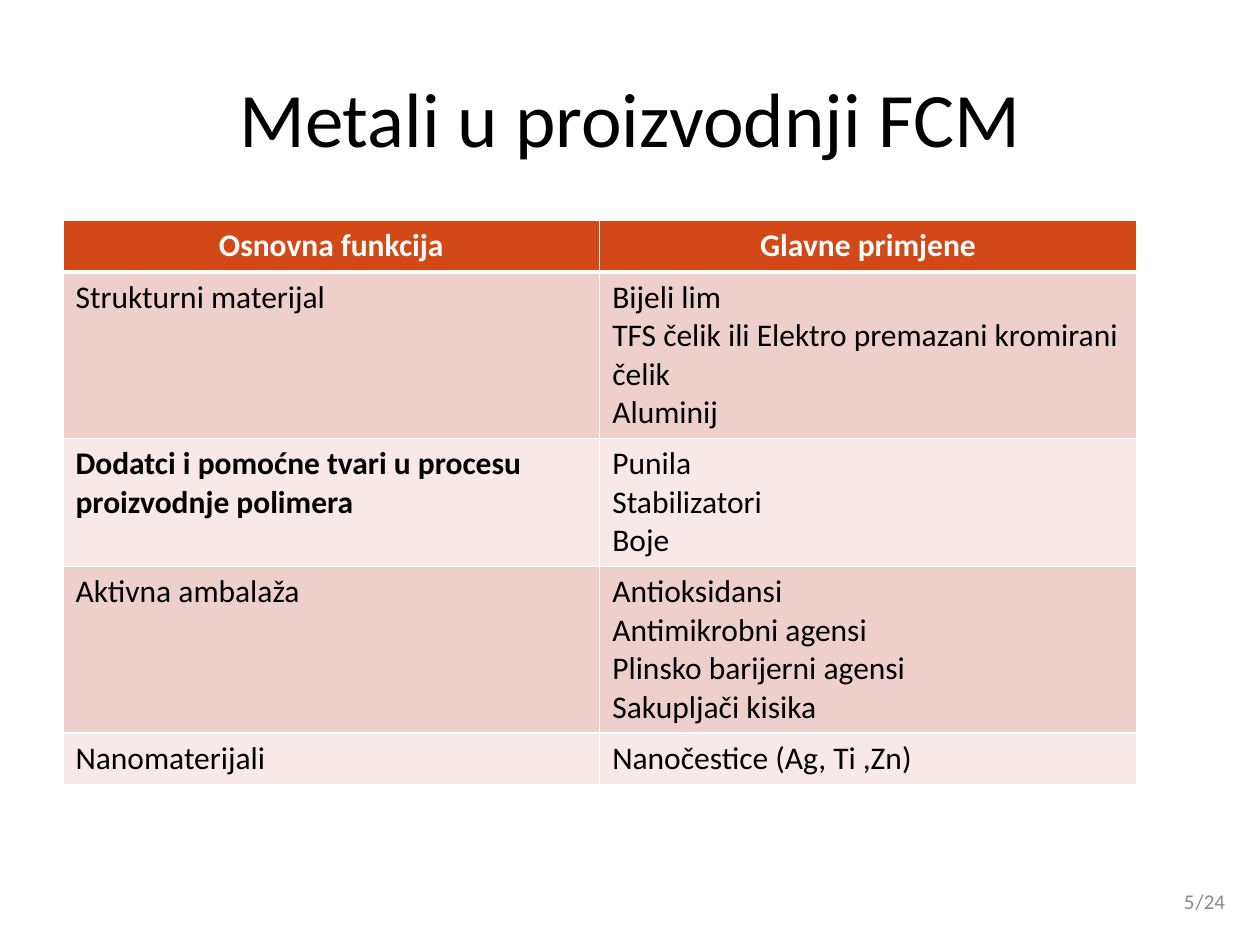
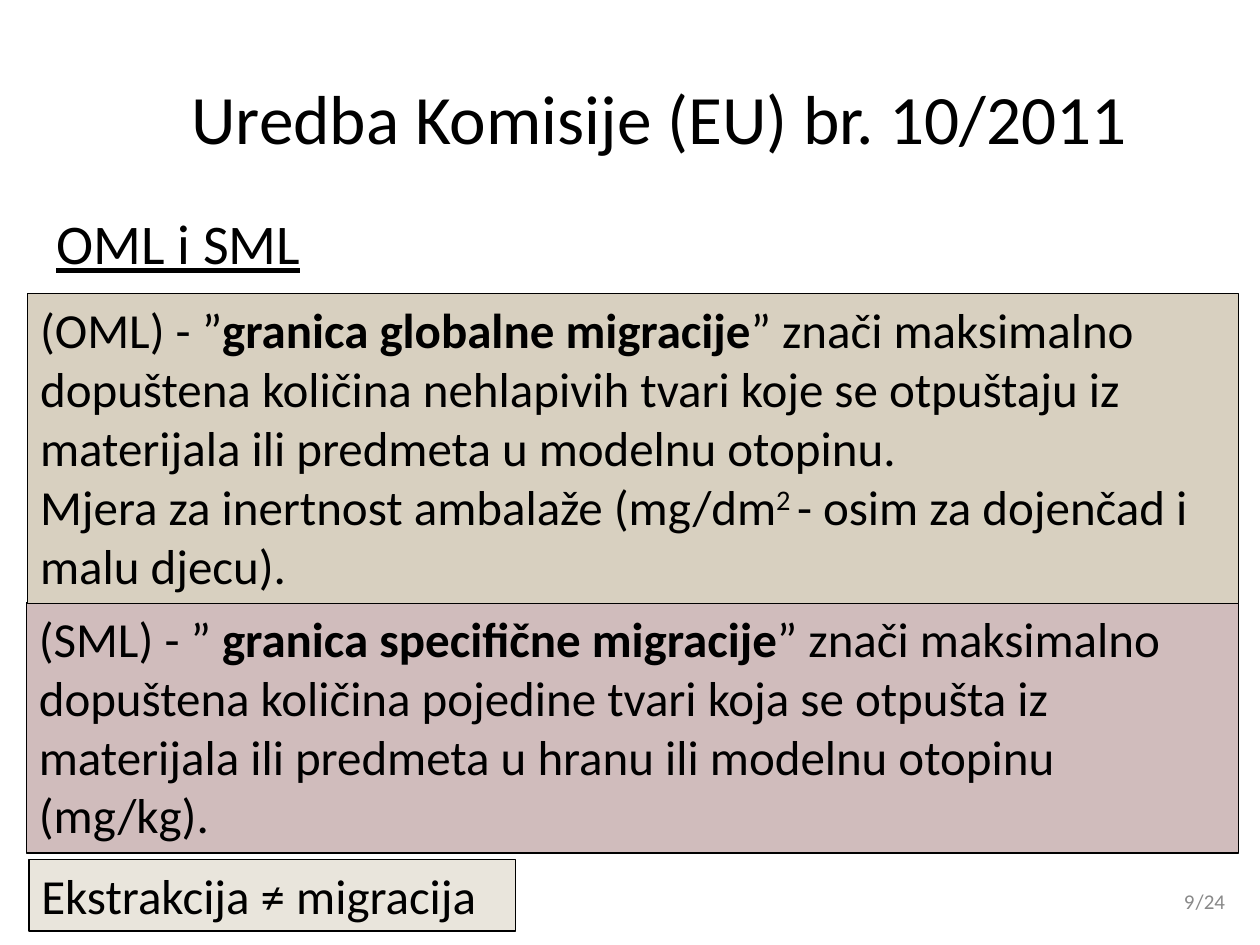
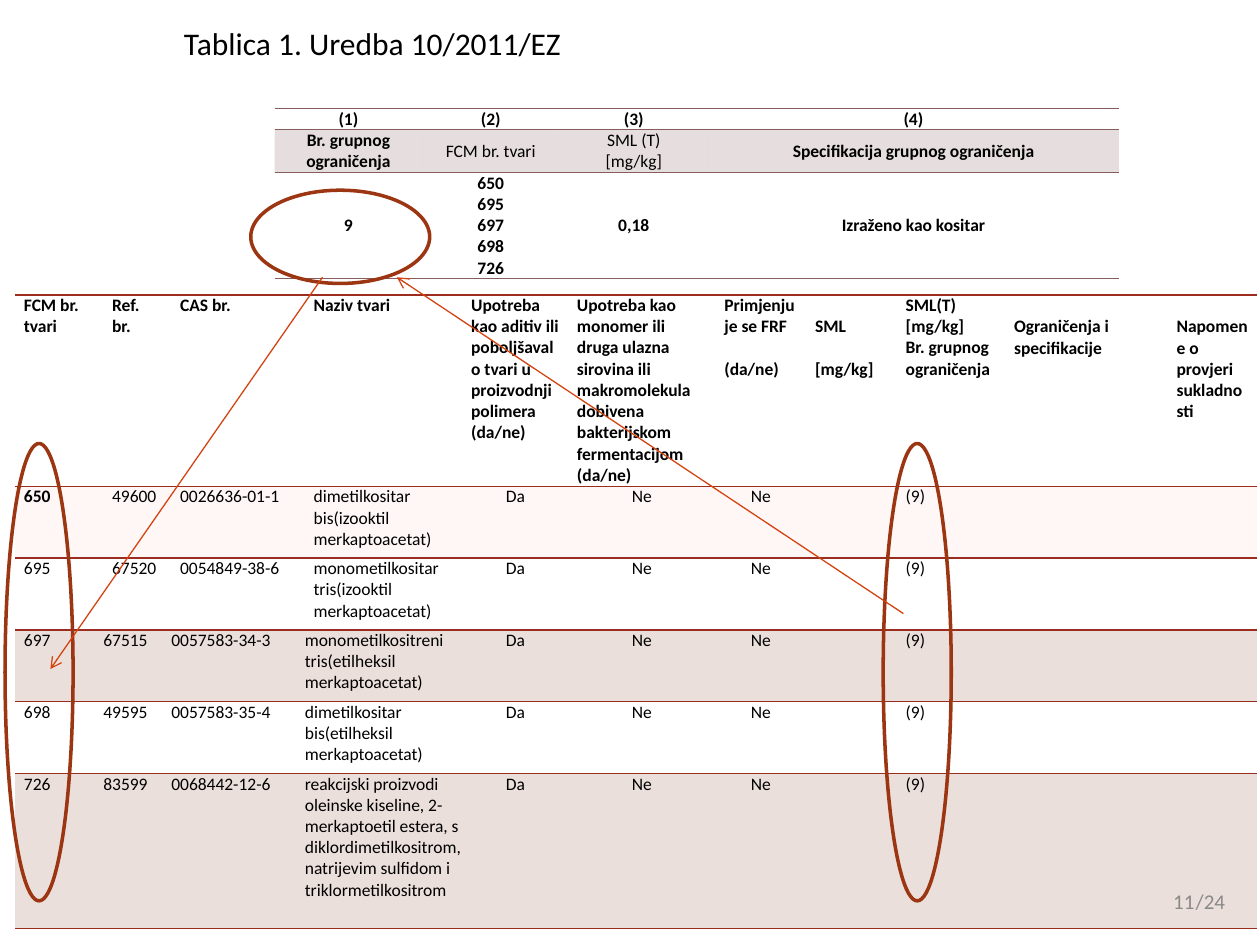
from dataclasses import dataclass
from typing import NamedTuple, Optional

from lxml.etree import SubElement
from pptx import Presentation
from pptx.dml.color import RGBColor
from pptx.enum.shapes import MSO_CONNECTOR, MSO_SHAPE
from pptx.enum.text import MSO_ANCHOR, MSO_AUTO_SIZE, PP_ALIGN
from pptx.oxml.ns import qn
from pptx.util import Inches, Pt

# Shared style
FONT = "Calibri"
BLACK = RGBColor(0x00, 0x00, 0x00)
WHITE = RGBColor(0xFF, 0xFF, 0xFF)
GREY = RGBColor(0x89, 0x89, 0x89)
ORANGE = RGBColor(0xD3, 0x48, 0x17)
ARROW_ORANGE = RGBColor(0xD3, 0x44, 0x12)
RING_BROWN = RGBColor(0x9C, 0x35, 0x11)
PINK = RGBColor(0xEF, 0xCF, 0xCC)
PALE_PINK = RGBColor(0xF7, 0xE9, 0xE7)
MAUVE = RGBColor(0xD0, 0xBC, 0xBC)
SAND = RGBColor(0xD8, 0xD0, 0xC0)
PALE_SAND = RGBColor(0xE9, 0xE5, 0xDC)
PLUM = RGBColor(0x85, 0x5D, 0x5D)
RED = RGBColor(0x9B, 0x2D, 0x1F)
PEACH = RGBColor(0xFA, 0xD9, 0xCD)
DUST = RGBColor(0xEB, 0xDF, 0xDB)

PAGE_COUNT = 24
PLAIN_TABLE_STYLE = "{2D5ABB26-0587-4C30-8999-92F81FD0307C}"
LEFT, CENTER, RIGHT = PP_ALIGN.LEFT, PP_ALIGN.CENTER, PP_ALIGN.RIGHT


class Place(NamedTuple):
    left: float
    top: float
    width: float
    height: float

    def lengths(self) -> list:
        return [Inches(value) for value in self]


class Insets(NamedTuple):
    left: float = 0.1
    top: float = 0.05
    right: float = 0.1
    bottom: float = 0.05


class Span(NamedTuple):
    text: str
    bold: bool = False
    raised: bool = False


class Border(NamedTuple):
    side: str
    color: RGBColor
    width: float


@dataclass
class Cell:
    text: str
    size: float = 10
    color: RGBColor = BLACK
    bold: bool = False
    align: PP_ALIGN = LEFT
    anchor: MSO_ANCHOR = MSO_ANCHOR.TOP
    insets: Insets = Insets()
    last_gap: float = 0
    fill: Optional[RGBColor] = None
    opacity: int = 100
    borders: tuple = ()


@dataclass
class Definition:
    place: Place
    fill: RGBColor
    paragraphs: list


def style_para(para, size: float, color: RGBColor = BLACK, align: PP_ALIGN = LEFT) -> None:
    para.alignment = align
    para.font.name = FONT
    para.font.size = Pt(size)
    para.font.color.rgb = color


def set_insets(target, insets: Insets) -> None:
    target.margin_left, target.margin_top, target.margin_right, target.margin_bottom = (
        Inches(value) for value in insets)


def add_page(deck, title: str, place: Place, size: float, align: PP_ALIGN = LEFT,
             left_inset: float = 0.1):
    page = deck.slides.add_slide(deck.slide_layouts[5])
    box = page.shapes.title
    box.left, box.top, box.width, box.height = place.lengths()
    frame = box.text_frame
    frame.text = title
    frame.auto_size = MSO_AUTO_SIZE.NONE
    frame.vertical_anchor = MSO_ANCHOR.MIDDLE
    frame.margin_left = Inches(left_inset)
    style_para(frame.paragraphs[0], size, align=align)
    return page


def add_text(page, place: Place, text: str, size: float, color: RGBColor = BLACK,
             align: PP_ALIGN = LEFT, anchor: MSO_ANCHOR = MSO_ANCHOR.TOP,
             insets: Insets = Insets()):
    frame = page.shapes.add_textbox(*place.lengths()).text_frame
    frame.word_wrap = True
    frame.vertical_anchor = anchor
    set_insets(frame, insets)
    frame.text = text
    style_para(frame.paragraphs[0], size, color, align)
    return frame


def add_footer(page, number: int) -> None:
    add_text(page, Place(7.17, 6.95, 2.33, 0.4), str(number), 12, GREY, RIGHT,
             MSO_ANCHOR.MIDDLE, Insets(right=0.02))
    add_text(page, Place(9.49, 6.95, 0.5, 0.4), f"/{PAGE_COUNT}", 12, GREY, LEFT,
             MSO_ANCHOR.MIDDLE, Insets(left=0))


def add_definition(page, definition: Definition) -> None:
    box = page.shapes.add_shape(MSO_SHAPE.RECTANGLE, *definition.place.lengths())
    box.shadow.inherit = False
    box.fill.solid()
    box.fill.fore_color.rgb = definition.fill
    box.line.color.rgb = BLACK
    box.line.width = Pt(0.75)
    frame = box.text_frame
    frame.word_wrap = True
    frame.auto_size = MSO_AUTO_SIZE.SHAPE_TO_FIT_TEXT
    frame.vertical_anchor = MSO_ANCHOR.TOP
    for index, spans in enumerate(definition.paragraphs):
        para = frame.add_paragraph() if index else frame.paragraphs[0]
        style_para(para, 28)
        for span in spans:
            run = para.add_run()
            run.text = span.text
            if span.bold:
                run.font.bold = True
            if span.raised:
                run.font._element.set("baseline", "30000")


def add_ring(page, place: Place) -> None:
    ring = page.shapes.add_shape(MSO_SHAPE.OVAL, *place.lengths())
    ring.shadow.inherit = False
    ring.fill.background()
    ring.line.color.rgb = RING_BROWN
    ring.line.width = Pt(2)


def add_arrow(page, start: tuple, end: tuple) -> None:
    points = [Inches(value) for value in start + end]
    arrow = page.shapes.add_connector(MSO_CONNECTOR.STRAIGHT, *points)
    arrow.line.color.rgb = ARROW_ORANGE
    arrow.line.width = Pt(0.75)
    SubElement(arrow.line._get_or_add_ln(), qn("a:tailEnd"), type="arrow")
    SubElement(arrow._element.spPr, qn("a:effectLst"))


def add_border(cell, border: Border) -> None:
    line = SubElement(cell._tc.get_or_add_tcPr(), qn(f"a:ln{border.side}"),
                      w=str(Pt(border.width)))
    solid = SubElement(line, qn("a:solidFill"))
    SubElement(solid, qn("a:srgbClr"), val=str(border.color))


def fill_cell(cell, content: Cell) -> None:
    # Borders precede the fill in the cell properties
    for border in content.borders:
        add_border(cell, border)
    if content.fill is None:
        cell.fill.background()
    else:
        cell.fill.solid()
        cell.fill.fore_color.rgb = content.fill
        if content.opacity < 100:
            color = cell._tc.tcPr.find(f"{qn('a:solidFill')}/{qn('a:srgbClr')}")
            SubElement(color, qn("a:alpha"), val=str(content.opacity * 1000))
    set_insets(cell, content.insets)
    cell.vertical_anchor = content.anchor
    cell.text_frame.text = content.text
    for para in cell.text_frame.paragraphs:
        style_para(para, content.size, content.color, content.align)
        para.font.bold = content.bold
    if content.last_gap:
        para.space_before = Pt(content.last_gap)


def add_grid(page, left: float, top: float, widths: list, heights: list, rows: list) -> None:
    place = Place(left, top, sum(widths), sum(heights))
    table = page.shapes.add_table(len(heights), len(widths), *place.lengths()).table
    table._tbl.tblPr.find(qn("a:tableStyleId")).text = PLAIN_TABLE_STYLE
    table.horz_banding = False
    for column, width in zip(table.columns, widths):
        column.width = Inches(width)
    for row, height, contents in zip(table.rows, heights, rows):
        row.height = Inches(height)
        for cell, content in zip(row.cells, contents):
            fill_cell(cell, content)


def build_metals(deck) -> None:
    page = add_page(deck, "Metali u proizvodnji FCM", Place(0.5, 0.3, 9, 1.25), 44, CENTER)
    texts = [
        ("Osnovna funkcija", "Glavne primjene"),
        ("Strukturni materijal",
         "Bijeli lim\nTFS čelik ili Elektro premazani kromirani čelik\nAluminij"),
        ("Dodatci i pomoćne tvari u procesu proizvodnje polimera",
         "Punila\nStabilizatori\nBoje"),
        ("Aktivna ambalaža",
         "Antioksidansi\nAntimikrobni agensi\nPlinsko barijerni agensi\nSakupljači kisika"),
        ("Nanomaterijali", "Nanočestice (Ag, Ti ,Zn)"),
    ]
    rows = []
    for row, pair in enumerate(texts):
        header = row == 0
        borders = (Border("L", WHITE, 1), Border("R", WHITE, 1),
                   Border("T", WHITE, 3 if row == 1 else 1),
                   Border("B", WHITE, 3 if header else 1))
        fill = ORANGE if header else PINK if row % 2 else PALE_PINK
        rows.append([
            Cell(text, 18, WHITE if header else BLACK,
                 bold=header or (row == 2 and column == 0),
                 align=CENTER if header else LEFT, fill=fill, borders=borders)
            for column, text in enumerate(pair)])
    add_grid(page, 0.5, 1.75, [4.26] * 2, [0.41, 1.3, 1, 1.3, 0.41], rows)
    add_footer(page, 5)


def build_limits(deck) -> None:
    page = add_page(deck, "Uredba Komisije (EU) br. 10/2011", Place(1.3, 0.3, 8.27, 1.25),
                    39.6, left_inset=0.22)
    definitions = [
        Definition(Place(0.21, 4.78, 9.62, 1.99), MAUVE, [[
            Span("(SML) - ” "), Span("granica specifične migracije", bold=True),
            Span("” znači maksimalno dopuštena količina pojedine tvari koja se otpušta iz "
                 "materijala ili predmeta u hranu ili modelnu otopinu (mg/kg).")]]),
        Definition(Place(0.22, 2.33, 9.61, 2.46), SAND, [
            [Span("(OML) - ”"), Span("granica globalne migracije", bold=True),
             Span("” znači maksimalno dopuštena količina nehlapivih tvari koje se otpuštaju "
                  "iz materijala ili predmeta u modelnu otopinu.")],
            [Span("Mjera za inertnost ambalaže (mg/dm"), Span("2 ", raised=True),
             Span("- osim za dojenčad i malu djecu).")]]),
        Definition(Place(0.23, 6.82, 3.86, 0.57), PALE_SAND,
                   [[Span("Ekstrakcija ≠ migracija")]]),
    ]
    for definition in definitions:
        add_definition(page, definition)
    heading = add_text(page, Place(0.35, 1.61, 4.96, 0.64), "OML i SML", 32)
    heading.paragraphs[0].font.underline = True
    add_footer(page, 9)


def add_group_table(page) -> None:
    texts = [
        ("(1)", "(2)", "(3)", "(4)"),
        ("Br. grupnog ograničenja", "FCM br. tvari", "SML (T)\n[mg/kg]",
         "Specifikacija grupnog ograničenja"),
        ("9", "650\n695\n697\n698\n726", "0,18", "Izraženo kao kositar"),
    ]
    borders = (Border("T", PLUM, 1), Border("B", PLUM, 1))
    rows = [[
        Cell(text, bold=not (row == 1 and column in (1, 2)), align=CENTER,
             anchor=MSO_ANCHOR.MIDDLE, insets=Insets(0.06, 0, 0.06, 0),
             fill=PLUM if row == 1 else None, opacity=20, borders=borders)
        for column, text in enumerate(texts_in_row)]
        for row, texts_in_row in enumerate(texts)]
    add_grid(page, 2.18, 0.86, [1.17, 1.09, 1.18, 3.26], [0.17, 0.34, 0.84], rows)


def add_substance_table(page) -> None:
    headers = [
        "FCM br. tvari", "Ref.\nbr.", "CAS br.", "Naziv tvari",
        "Upotreba kao aditiv ili poboljšavalo tvari u proizvodnji polimera\n(da/ne)",
        "Upotreba kao monomer ili druga ulazna sirovina ili makromolekula dobivena "
        "bakterijskom fermentacijom\n(da/ne)",
        "Primjenjuje se FRF\n(da/ne)", "SML\n[mg/kg]",
        "SML(T) [mg/kg]\nBr. grupnog ograničenja",
        "Ograničenja i specifikacije", "Napomene o provjeri sukladnosti",
    ]
    substances = [
        ("650", "49600", "0026636-01-1", "dimetilkositar bis(izooktil merkaptoacetat)"),
        ("695", "67520", "0054849-38-6", "monometilkositar tris(izooktil merkaptoacetat)"),
        ("697", "67515", "0057583-34-3", "monometilkositreni tris(etilheksil merkaptoacetat)"),
        ("698", "49595", "0057583-35-4", "dimetilkositar bis(etilheksil merkaptoacetat)"),
        ("726", "83599", "0068442-12-6",
         "reakcijski proizvodi oleinske kiseline, 2-merkaptoetil estera, s "
         "diklordimetilkositrom, natrijevim sulfidom i triklormetilkositrom"),
    ]
    shared_values = ("Da", "Ne", "Ne", "", "(9)", "", "")
    lowered_headers, split_headers = (7, 9, 10), (6, 7)
    line_height = 0.17
    thick_top, thick_bottom = Border("T", RED, 1), Border("B", RED, 1)
    thin_top, thin_bottom = Border("T", RED, 0.5), Border("B", RED, 0.5)

    rows = [[
        Cell(text, bold=True,
             insets=Insets(0.07, line_height if column in lowered_headers else 0, 0.07, 0),
             last_gap=12.2 if column in split_headers else 0,
             borders=(thick_top, thin_bottom))
        for column, text in enumerate(headers)]]
    for row, substance in enumerate(substances):
        fill = (PEACH if row == 0 else DUST) if row % 2 == 0 else None
        cells = []
        for column, text in enumerate(substance + shared_values):
            side = 0 if row >= 2 and column in (1, 2, 3) else 0.07
            cells.append(Cell(
                text, bold=row == 0 and column == 0,
                align=CENTER if column in (4, 5, 6) else LEFT,
                insets=Insets(side, 0, side, 0), fill=fill,
                opacity=20 if row == 0 else 100,
                borders=(thick_top if row else thin_top, thick_bottom)))
        rows.append(cells)
    add_grid(page, 0.12, 2.34,
             [0.7, 0.54, 1.06, 1.25, 0.84, 1.17, 0.72, 0.72, 0.86, 1.29, 0.71],
             [1.52] + [0.57] * 4 + [1.23], rows)


def build_regulation_table(deck) -> None:
    page = add_page(deck, "Tablica 1. Uredba 10/2011/EZ", Place(1.36, 0.14, 8.44, 0.4), 18)
    add_group_table(page)
    add_substance_table(page)
    # Links between the group number and its substances
    add_ring(page, Place(1.99, 1.51, 1.42, 0.74))
    for left in (7.01, 0.04):
        add_ring(page, Place(left, 3.52, 0.54, 3.63))
    add_arrow(page, (7.17, 4.87), (3.15, 2.2))
    add_arrow(page, (2.56, 2.2), (0.4, 5.31))
    add_footer(page, 11)


def main() -> None:
    deck = Presentation()
    deck.slide_width, deck.slide_height = Inches(10), Inches(7.5)
    build_metals(deck)
    build_limits(deck)
    build_regulation_table(deck)
    deck.save("out.pptx")


if __name__ == "__main__":
    main()
